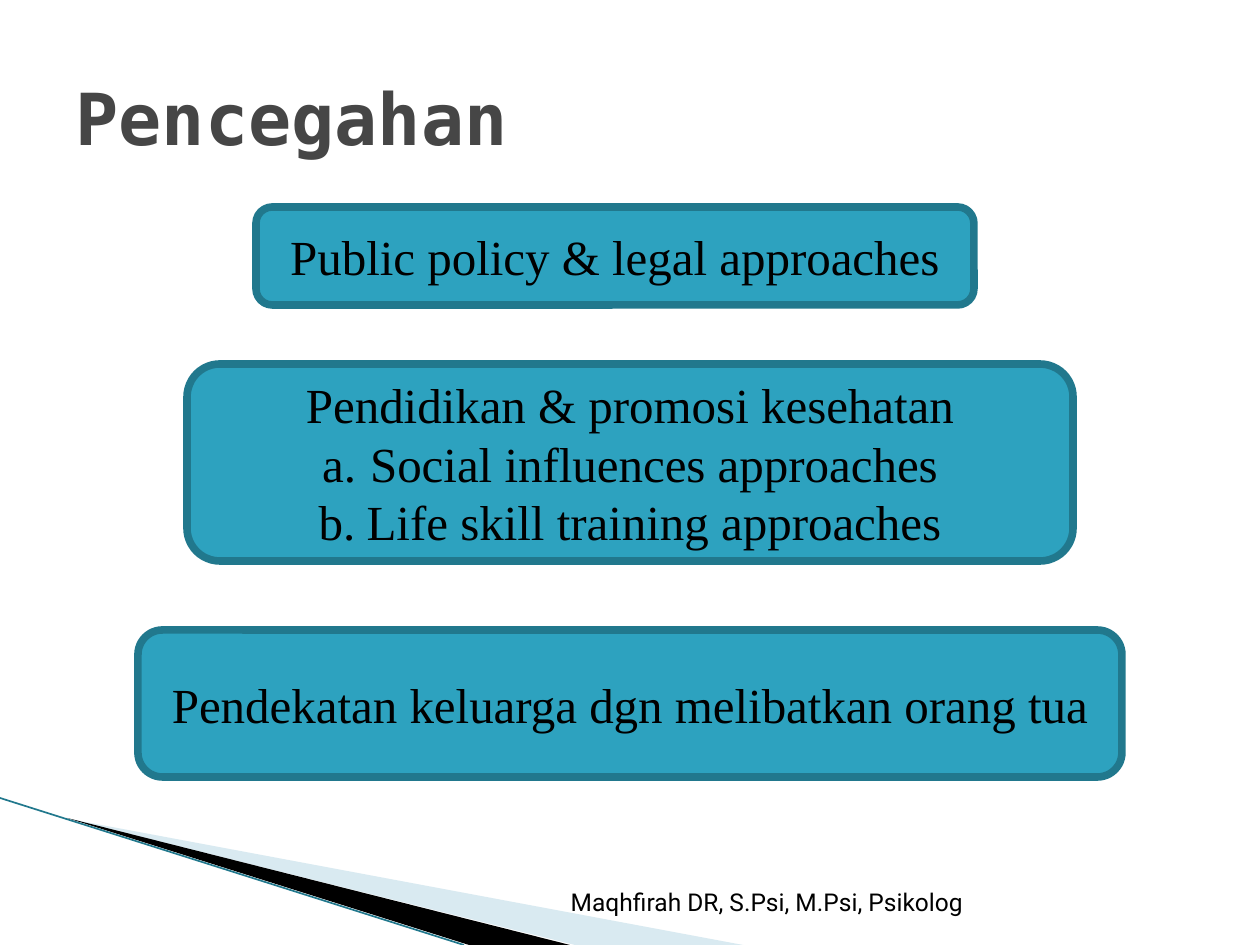
from lxml.etree import SubElement
from pptx import Presentation
from pptx.dml.color import RGBColor
from pptx.enum.shapes import MSO_CONNECTOR, MSO_SHAPE
from pptx.enum.text import MSO_ANCHOR, PP_ALIGN
from pptx.oxml.ns import qn
from pptx.util import Pt

TITLE = "Pencegahan"
FOOTER = "Maqhfirah DR, S.Psi, M.Psi, Psikolog"
# Box in px, heading, lettered items
CARDS = [
    ((256, 207, 718, 98), "Public policy & legal approaches", []),
    ((187, 364, 886, 197), "Pendidikan & promosi kesehatan",
     ["Social influences approaches", "Life skill training approaches"]),
    ((138, 630, 984, 147), "Pendekatan keluarga dgn melibatkan orang tua", []),
]
# Corner wedges: points in px, colour, opacity in percent
WEDGES = [
    ([(69, 819), (743, 945), (575, 945)], "A0CBDC", 40),
    ([(67, 818), (570, 945), (469, 945)], "000000", 100),
]
EDGE = (0, 798, 464, 945)
SCALE = 914400 / 126


def px(*vals):
    return [round(v * SCALE) for v in vals]


def color(code):
    return RGBColor.from_string(code)


def style(par, name, size, code="000000", bold=False):
    par.font.name, par.font.size, par.font.bold = name, Pt(size), bold
    par.font.color.rgb = color(code)


def letter(par):
    props = par._p.get_or_add_pPr()
    indent, = px(48)
    props.set("marL", str(indent))
    props.set("indent", str(-indent))
    SubElement(props, qn("a:buAutoNum"), type="alphaLcPeriod")


prs = Presentation()
prs.slide_width, prs.slide_height = px(1260, 945)
slide = prs.slides.add_slide(prs.slide_layouts[5])
shapes = slide.shapes

# Title
title = shapes.title
title.left, title.top, title.width, title.height = px(63, 38, 1134, 158)
title.text_frame.text = TITLE
title.text_frame.vertical_anchor = MSO_ANCHOR.MIDDLE
head = title.text_frame.paragraphs[0]
head.alignment = PP_ALIGN.LEFT
style(head, "DejaVu Sans Mono", 41, "464646", True)

# Corner wedges
for pts, code, alpha in WEDGES:
    pen = shapes.build_freeform(*pts[0], scale=SCALE)
    pen.add_line_segments(pts[1:], close=True)
    wedge = pen.convert_to_shape()
    wedge.shadow.inherit = False
    wedge.fill.solid()
    wedge.fill.fore_color.rgb = color(code)
    wedge.line.fill.background()
    if alpha < 100:
        tint = wedge._element.spPr.find(".//" + qn("a:srgbClr"))
        SubElement(tint, qn("a:alpha"), val=str(alpha * 1000))

edge = shapes.add_connector(MSO_CONNECTOR.STRAIGHT, *px(*EDGE))
edge.line.color.rgb = color("21788D")
edge.line.width = Pt(0.95)
SubElement(edge._element.spPr, qn("a:effectLst"))

# Cards
for box, text, items in CARDS:
    card = shapes.add_shape(MSO_SHAPE.ROUNDED_RECTANGLE, *px(*box))
    card.shadow.inherit = False
    card.fill.solid()
    card.fill.fore_color.rgb = color("2DA2BF")
    card.line.color.rgb = color("21788D")
    card.line.width = Pt(4.33)
    frame = card.text_frame
    frame.word_wrap = True
    frame.vertical_anchor = MSO_ANCHOR.MIDDLE
    frame.text = "\n".join([text] + items)
    for i, par in enumerate(frame.paragraphs):
        par.alignment = PP_ALIGN.CENTER
        if i:
            letter(par)
        style(par, "Times New Roman", 28)

# Footer
foot = shapes.add_textbox(*px(452, 881, 630, 43)).text_frame
foot.word_wrap = True
foot.text = FOOTER
foot.paragraphs[0].alignment = PP_ALIGN.CENTER
style(foot.paragraphs[0], "Roboto", 14)

prs.save("out.pptx")
